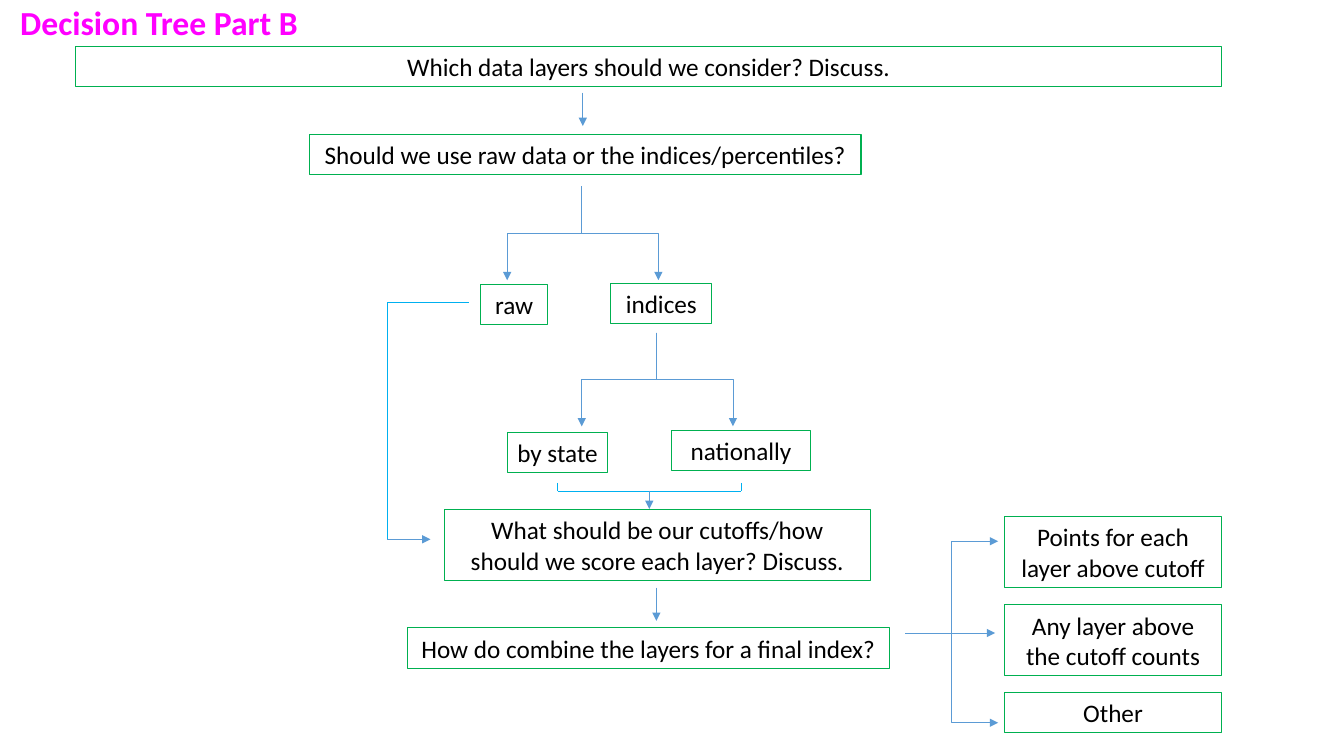
from collections import namedtuple

from lxml import etree
from pptx import Presentation
from pptx.dml.color import RGBColor
from pptx.enum.shapes import MSO_CONNECTOR, MSO_SHAPE
from pptx.enum.text import MSO_ANCHOR, MSO_AUTO_SIZE, PP_ALIGN
from pptx.oxml.ns import qn
from pptx.util import Inches, Pt

RECTANGLE = MSO_SHAPE.RECTANGLE
STRAIGHT, ELBOW = MSO_CONNECTOR.STRAIGHT, MSO_CONNECTOR.ELBOW
LEFT, CENTER = PP_ALIGN.LEFT, PP_ALIGN.CENTER
MIDDLE = MSO_ANCHOR.MIDDLE
GROW = MSO_AUTO_SIZE.SHAPE_TO_FIT_TEXT

COLORS = {"text": "000000", "title": "FF00FF", "border": "00B050",
          "arrow": "5B9BD5", "join": "00B0F0"}
FONT = "Calibri"
ONE_LINE, TWO_LINES = 0.4, 0.71
FORK_DROP = 0.93
ARROW_DROP = 0.33

Box = namedtuple("Box", "left top width height")


def color(name):
    """Return the named palette colour."""
    return RGBColor.from_string(COLORS[name])


def write_text(frame, text, size=18, fill="text", bold=False, align=CENTER):
    """Write one formatted paragraph into a text frame."""
    frame.word_wrap = True
    frame.auto_size = GROW
    frame.vertical_anchor = MIDDLE
    para = frame.paragraphs[0]
    para.alignment = align
    span = para.add_run()
    span.text = text
    span.font.name = FONT
    span.font.size = Pt(size)
    span.font.bold = bold
    span.font.color.rgb = color(fill)


def place(shape, box):
    """Move and size a shape to fill a box."""
    shape.left, shape.top = Inches(box.left), Inches(box.top)
    shape.width, shape.height = Inches(box.width), Inches(box.height)


def add_title(page, box, text):
    """Fill the title placeholder."""
    title = page.shapes.title
    write_text(title.text_frame, text, size=24, fill="title", bold=True, align=LEFT)
    place(title, box)


def add_node(page, text, left, top, width, height=ONE_LINE):
    """Draw one outlined box of the tree."""
    node = page.shapes.add_shape(RECTANGLE, Inches(left), Inches(top),
                                 Inches(width), Inches(height))
    node.shadow.inherit = False
    node.fill.background()
    node.line.color.rgb = color("border")
    node.line.width = Pt(0.75)
    write_text(node.text_frame, text)


def add_link(page, start, end, kind=STRAIGHT, stroke="arrow", head=True):
    """Connect two points, with an arrowhead at the end if wanted."""
    link = page.shapes.add_connector(kind, *map(Inches, (*start, *end)))
    link.line.color.rgb = color(stroke)
    link.line.width = Pt(0.5)
    if head:
        etree.SubElement(link.line._get_or_add_ln(), qn("a:tailEnd"), type="triangle")
    etree.SubElement(link._element.spPr, qn("a:effectLst"))
    return link


def add_fork(page, x, y):
    """Split one stem downwards into two arrows."""
    for reach, turn in ((-0.74, 90), (0.76, 270)):
        middle_x, middle_y = x + reach / 2, y + FORK_DROP / 2
        half_width = FORK_DROP / 2 if reach > 0 else -FORK_DROP / 2
        half_height = abs(reach) / 2
        link = add_link(page, (middle_x + half_width, middle_y - half_height),
                        (middle_x - half_width, middle_y + half_height), kind=ELBOW)
        link._element.spPr.find(qn("a:xfrm")).set("rot", str(turn * 60000))


def add_down_arrow(page, x, y):
    """Draw a short arrow straight down."""
    add_link(page, (x, y), (x, y + ARROW_DROP))


def add_data_questions(page, box):
    """Draw the questions on layers and on the kind of data."""
    left, top = box.left, box.top
    add_node(page, "Which data layers should we consider? Discuss.", left, top, box.width)
    add_down_arrow(page, left + 5.03, top + 0.46)
    add_node(page, "Should we use raw data or the indices/percentiles?",
             left + 2.32, top + 0.87, 5.47)
    add_fork(page, left + 5.02, top + 1.39)
    add_node(page, "raw", left + 4.02, top + 2.36, 0.66)
    add_node(page, "indices", left + 5.31, top + 2.35, 1)
    add_fork(page, left + 5.76, top + 2.84)
    add_node(page, "by state", left + 4.28, top + 3.83, 1)
    add_node(page, "nationally", left + 5.91, top + 3.81, 1.38)


def add_joins(page, box):
    """Lead the raw branch and the indices branches to the scoring question."""
    left, top = box.left, box.top
    bottom = top + box.height
    add_link(page, (left + 0.81, top), (left, top), stroke="join", head=False)
    add_link(page, (left, top), (left, bottom), stroke="join", head=False)
    add_link(page, (left, bottom), (left + 0.43, bottom))
    first, last, bar = left + 1.69, left + 3.51, top + 1.87
    for x in (first, last):
        add_link(page, (x, bar - 0.08), (x, bar), stroke="join", head=False)
    add_link(page, (first, bar), (last, bar), stroke="join", head=False)
    middle = (first + last) / 2
    add_link(page, (middle, bar), (middle, bar + 0.18))


def add_score_questions(page, box):
    """Draw the questions on cutoffs and on the final index."""
    add_node(page, "What should be our cutoffs/how should we score each layer? Discuss.",
             box.left + 0.37, box.top, 4.22, TWO_LINES)
    add_down_arrow(page, box.left + 2.47, box.top + 0.78)
    add_node(page, "How do combine the layers for a final index?",
             box.left, box.top + 1.18, box.width)


def add_index_options(page, box):
    """Draw the three ways to combine layers and the arrows to them."""
    node_left = box.left + 0.98
    options = (("Points for each layer above cutoff", TWO_LINES),
               ("Any layer above the cutoff counts", TWO_LINES),
               ("Other", ONE_LINE))
    gap = (box.height - sum(height for _, height in options)) / (len(options) - 1)
    top = box.top
    for text, height in options:
        add_node(page, text, node_left, top, box.width - 0.98, height)
        top += height + gap
    stem = (box.left, box.top + 1.16)
    for y in (box.top + 2.05, box.top + 0.25):
        add_link(page, stem, (box.left + 0.92, y), kind=ELBOW)
    add_link(page, (box.left + 0.46, stem[1]), (box.left + 0.89, stem[1]))


def main():
    """Build and save the decision tree slide."""
    deck = Presentation()
    deck.slide_width, deck.slide_height = Inches(13.33), Inches(7.5)
    page = deck.slides.add_slide(deck.slide_layouts[5])
    add_title(page, Box(0.1, -0.03, 3.59, 0.5), "Decision Tree Part B")
    add_data_questions(page, Box(0.75, 0.46, 11.37, 4.23))
    add_joins(page, Box(3.84, 3, 3.51, 2.35))
    add_score_questions(page, Box(4.04, 5.05, 4.78, 1.58))
    add_index_options(page, Box(8.98, 5.12, 3.14, 2.15))
    deck.save("out.pptx")


if __name__ == "__main__":
    main()
